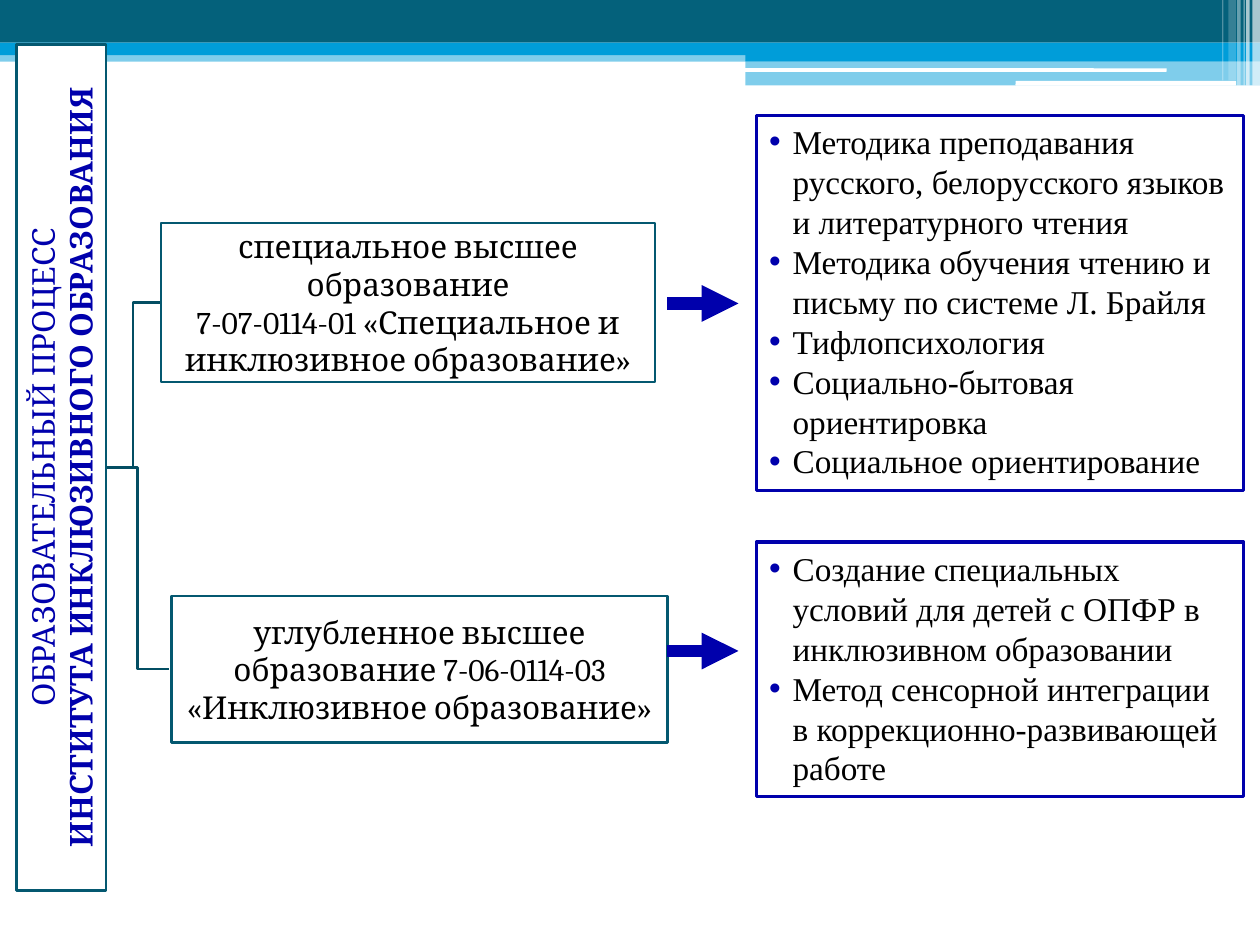
from pptx import Presentation
from pptx.util import Pt
from pptx.dml.color import RGBColor
from pptx.enum.shapes import MSO_SHAPE, MSO_CONNECTOR
from pptx.enum.text import PP_ALIGN, MSO_ANCHOR, MSO_AUTO_SIZE
from pptx.oxml.ns import qn
from lxml.etree import SubElement

COLORS = {"white": "FFFFFF", "black": "000000", "teal": "04617B", "sky": "009DD9",
          "frame": "045870", "branch": "034E63", "navy": "0000AC"}


def rgb(name):
    return RGBColor.from_string(COLORS[name])


def add_box(x, y, w, h, fill=None, line=None, width=1.5, alpha=100, kind=MSO_SHAPE.RECTANGLE):
    s = slide.shapes.add_shape(kind, Pt(x), Pt(y), Pt(w), Pt(h))
    s.shadow.inherit = False
    if fill:
        s.fill.solid()
        s.fill.fore_color.rgb = rgb(fill)
        if alpha < 100:
            clr = s._element.spPr.find(qn("a:solidFill"))[0]
            SubElement(clr, qn("a:alpha"), val=str(alpha * 1000))
    else:
        s.fill.background()
    if line:
        s.line.color.rgb = rgb(line)
        s.line.width = Pt(width)
    else:
        s.line.fill.background()
    return s


prs = Presentation()
prs.slide_width, prs.slide_height = Pt(720), Pt(540)
slide = prs.slides.add_slide(prs.slide_layouts[6])

# Header bands
for x, y, w, h, fill, alpha in [
    (0, 28.8, 720, 6.5, "sky", 50),
    (0, 0, 720, 24.4, "teal", 100),
    (0, 24.4, 720, 7.2, "sky", 100),
    (426, 28, 294, 7, "sky", 100),
    (426, 34.6, 294, 14.2, "sky", 50),
]:
    add_box(x, y, w, h, fill, alpha=alpha)
for x, y, w, h in [(425.5, 39, 241.2, 2), (580.3, 46.2, 126, 2.7)]:
    add_box(x, y, w, h, "white", kind=MSO_SHAPE.ROUNDED_RECTANGLE)

# Header stripes at the right edge
for x, w, h, alpha in [(715.7, 4.3, 49, 65), (712.1, 2, 49, 65), (710.6, 0.7, 49, 60),
                       (707, 2, 49, 40), (702, 4.3, 46, 20), (698.4, 0.7, 46, 30)]:
    add_box(x, 0, w, h, "white", alpha=alpha)

# Branches from the process bar to the two levels
for x, y in [(96.5, 382.3), (91.4, 172.8)]:
    x0, y0 = 60.5, 267.1
    mid = (x0 + x) / 2
    fb = slide.shapes.build_freeform(Pt(x0), Pt(y0))
    fb.add_line_segments([(Pt(mid), Pt(y0)), (Pt(mid), Pt(y)), (Pt(x), Pt(y))], close=False)
    s = fb.convert_to_shape()
    s.shadow.inherit = False
    s.fill.background()
    s.line.color.rgb = rgb("branch")
    s.line.width = Pt(1.5)

# Process bar and the two levels of education
for x, y, w, h, angle, color, lines in [
    (-206.6, 241.5, 483.2, 51.2, 270, "navy",
     ["ОБРАЗОВАТЕЛЬНЫЙ ПРОЦЕСС", "ИНСТИТУТА ИНКЛЮЗИВНОГО ОБРАЗОВАНИЯ"]),
    (92, 127.5, 282.4, 90.8, 0, "black",
     ["специальное высшее образование",
      "7-07-0114-01 «Специальное и инклюзивное образование»"]),
    (98, 340.7, 283.5, 83.5, 0, "black",
     ["углубленное высшее образование 7-06-0114-03 «Инклюзивное образование»"]),
]:
    s = add_box(x, y, w, h, "white", "frame")
    s.rotation = angle
    tf = s.text_frame
    tf.word_wrap = True
    tf.vertical_anchor = MSO_ANCHOR.MIDDLE
    tf.margin_left = tf.margin_right = tf.margin_top = tf.margin_bottom = Pt(0.8)
    tf.text = "\n".join(lines)
    for i, p in enumerate(tf.paragraphs):
        p.alignment = PP_ALIGN.CENTER
        font = p.runs[0].font
        font.name, font.size, font.color.rgb = "Cambria", Pt(18), rgb(color)
        font.bold = angle == 270 and i == 1

# Arrows to the courses
for y in [173.4, 372]:
    s = slide.shapes.add_connector(MSO_CONNECTOR.STRAIGHT, Pt(381.4), Pt(y), Pt(422), Pt(y))
    s.line.color.rgb = rgb("navy")
    s.line.width = Pt(7)
    SubElement(s.line._get_or_add_ln(), qn("a:tailEnd"), type="triangle")
    SubElement(s._element.spPr, qn("a:effectLst"))

# Course lists
for y, h, courses in [
    (66, 214.3, ["Методика преподавания русского, белорусского языков и литературного чтения",
                 "Методика обучения чтению и письму по системе Л. Брайля",
                 "Тифлопсихология",
                 "Социально-бытовая ориентировка",
                 "Социальное ориентирование"]),
    (309.8, 145.3, ["Создание специальных условий для детей с ОПФР в инклюзивном образовании",
                    "Метод сенсорной интеграции в коррекционно-развивающей работе"]),
]:
    s = add_box(432.4, y, 278.2, h, line="navy", width=2)
    tf = s.text_frame
    tf.word_wrap = True
    tf.auto_size = MSO_AUTO_SIZE.SHAPE_TO_FIT_TEXT
    tf.vertical_anchor = MSO_ANCHOR.TOP
    tf.text = "\n".join(courses)
    for p in tf.paragraphs:
        p.alignment = PP_ALIGN.LEFT
        font = p.runs[0].font
        font.name, font.size, font.color.rgb = "Times New Roman", Pt(19), rgb("black")
        pPr = p._p.get_or_add_pPr()
        pPr.set("marL", str(Pt(13.5)))
        pPr.set("indent", str(-Pt(13.5)))
        SubElement(SubElement(pPr, qn("a:buClr")), qn("a:srgbClr"), val=COLORS["navy"])
        SubElement(pPr, qn("a:buFont"), typeface="Arial")
        SubElement(pPr, qn("a:buChar"), char="•")

prs.save("out.pptx")
